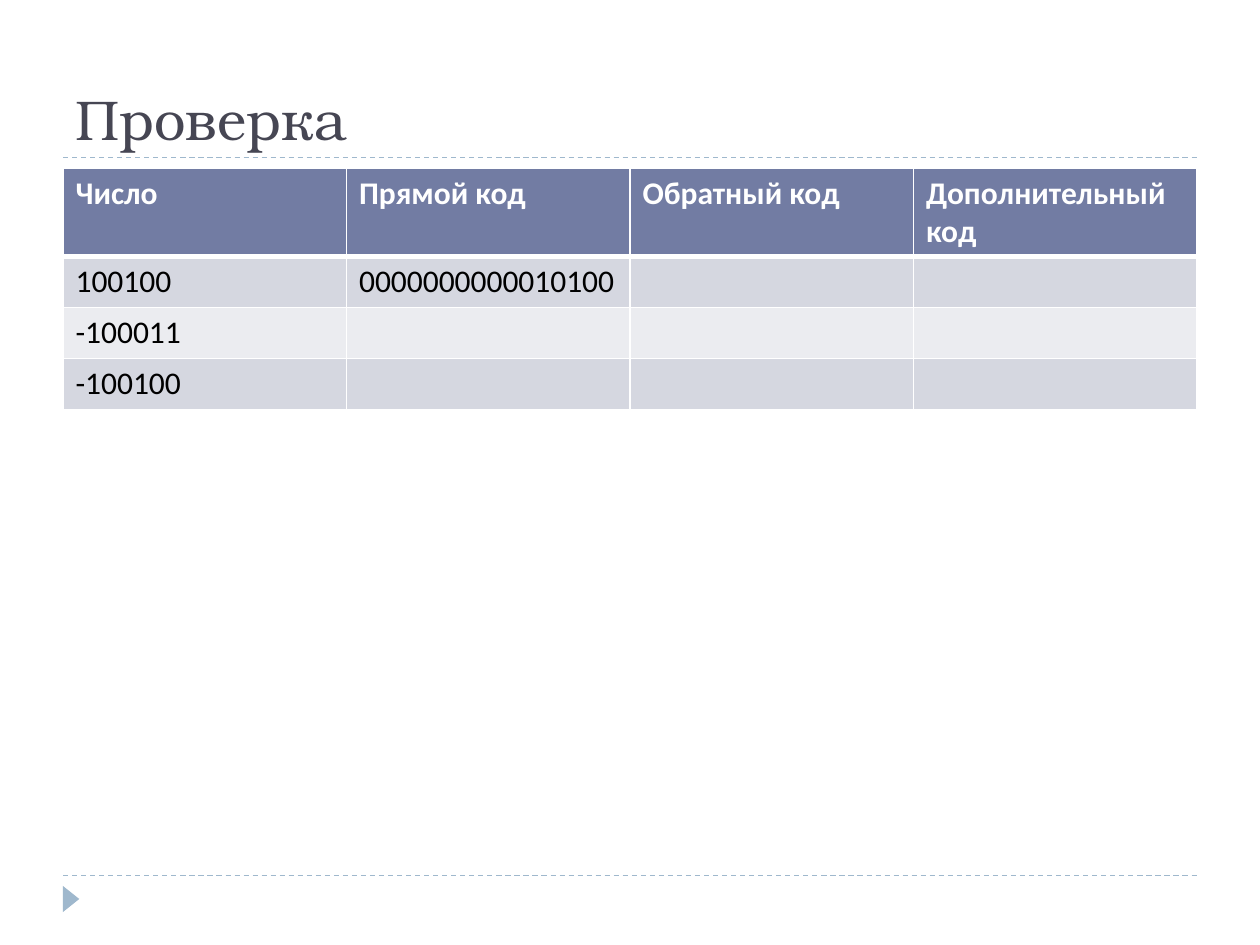
from dataclasses import dataclass

from lxml import etree
from pptx import Presentation
from pptx.dml.color import RGBColor
from pptx.enum import dml, shapes, text
from pptx.oxml import ns
from pptx.util import Pt


@dataclass(frozen=True)
class Theme:
    accent: str = "9FB8CD"
    title: str = "464653"
    header: str = "727CA3"
    bands: tuple = ("D5D7E0", "EBECF0")
    white: str = "FFFFFF"
    black: str = "000000"
    title_font: str = "TeX Gyre Bonum"
    body_font: str = "Calibri"
    title_size: int = 32
    body_size: int = 18


def style_font(font, name, size, color, bold=False):
    font.name, font.size, font.bold = name, Pt(size), bold
    font.color.rgb = RGBColor.from_string(color)


def add_borders(cell, color, widths):
    """Draw left, right, top and bottom borders, with widths in points."""
    props = cell._tc.get_or_add_tcPr()
    for index, (side, width) in enumerate(zip("LRTB", widths)):
        line = etree.Element(ns.qn(f"a:ln{side}"), w=str(Pt(width)))
        fill = etree.SubElement(line, ns.qn("a:solidFill"))
        etree.SubElement(fill, ns.qn("a:srgbClr"), val=color)
        props.insert(index, line)


theme = Theme()
left, width = 36, 648
deck = Presentation()
deck.slide_width, deck.slide_height = Pt(720), Pt(540)
page = deck.slides.add_slide(deck.slide_layouts[6])

# Dashed rules and the footer marker
for y in (500.4, 90):
    rule = page.shapes.add_connector(
        shapes.MSO_CONNECTOR.STRAIGHT, Pt(left), Pt(y), Pt(left + width), Pt(y))
    rule.line.color.rgb = RGBColor.from_string(theme.accent)
    rule.line.width = Pt(0.75)
    rule.line.dash_style = dml.MSO_LINE.DASH
    etree.SubElement(rule._element.spPr, ns.qn("a:effectLst"))

marker = page.shapes.add_shape(
    shapes.MSO_SHAPE.ISOSCELES_TRIANGLE, Pt(33.1), Pt(509), Pt(15), Pt(9.4))
marker.rotation = 90
marker.shadow.inherit = False
marker.fill.solid()
marker.fill.fore_color.rgb = RGBColor.from_string(theme.accent)
marker.line.fill.background()

# Title
title = page.shapes.add_textbox(Pt(left), Pt(12.2), Pt(width), Pt(77.8))
frame = title.text_frame
frame.word_wrap = True
frame.vertical_anchor = text.MSO_ANCHOR.BOTTOM
frame.text = "Проверка"
style_font(frame.paragraphs[0].runs[0].font,
           theme.title_font, theme.title_size, theme.title)

# Table of number codes
rows = [
    ("Число", "Прямой код", "Обратный код", "Дополнительный код"),
    ("100100", "0000000000010100", "", ""),
    ("-100011", "", "", ""),
    ("-100100", "", "", ""),
]
heights = [50.4] + [29.2] * 3
table = page.shapes.add_table(
    len(rows), len(rows[0]), Pt(left), Pt(96), Pt(width), Pt(sum(heights))).table
for column in table.columns:
    column.width = Pt(width / len(rows[0]))

for row_index, values in enumerate(rows):
    table.rows[row_index].height = Pt(heights[row_index])
    is_header = row_index == 0
    fill = theme.header if is_header else theme.bands[(row_index - 1) % 2]
    color = theme.white if is_header else theme.black
    top, bottom = (3 if row_index == 1 else 1), (3 if is_header else 1)
    for column_index, value in enumerate(values):
        cell = table.cell(row_index, column_index)
        cell.fill.solid()
        cell.fill.fore_color.rgb = RGBColor.from_string(fill)
        add_borders(cell, theme.white, (1, 1, top, bottom))
        if value:
            cell.text_frame.text = value
            style_font(cell.text_frame.paragraphs[0].runs[0].font,
                       theme.body_font, theme.body_size, color, is_header)

deck.save("out.pptx")
